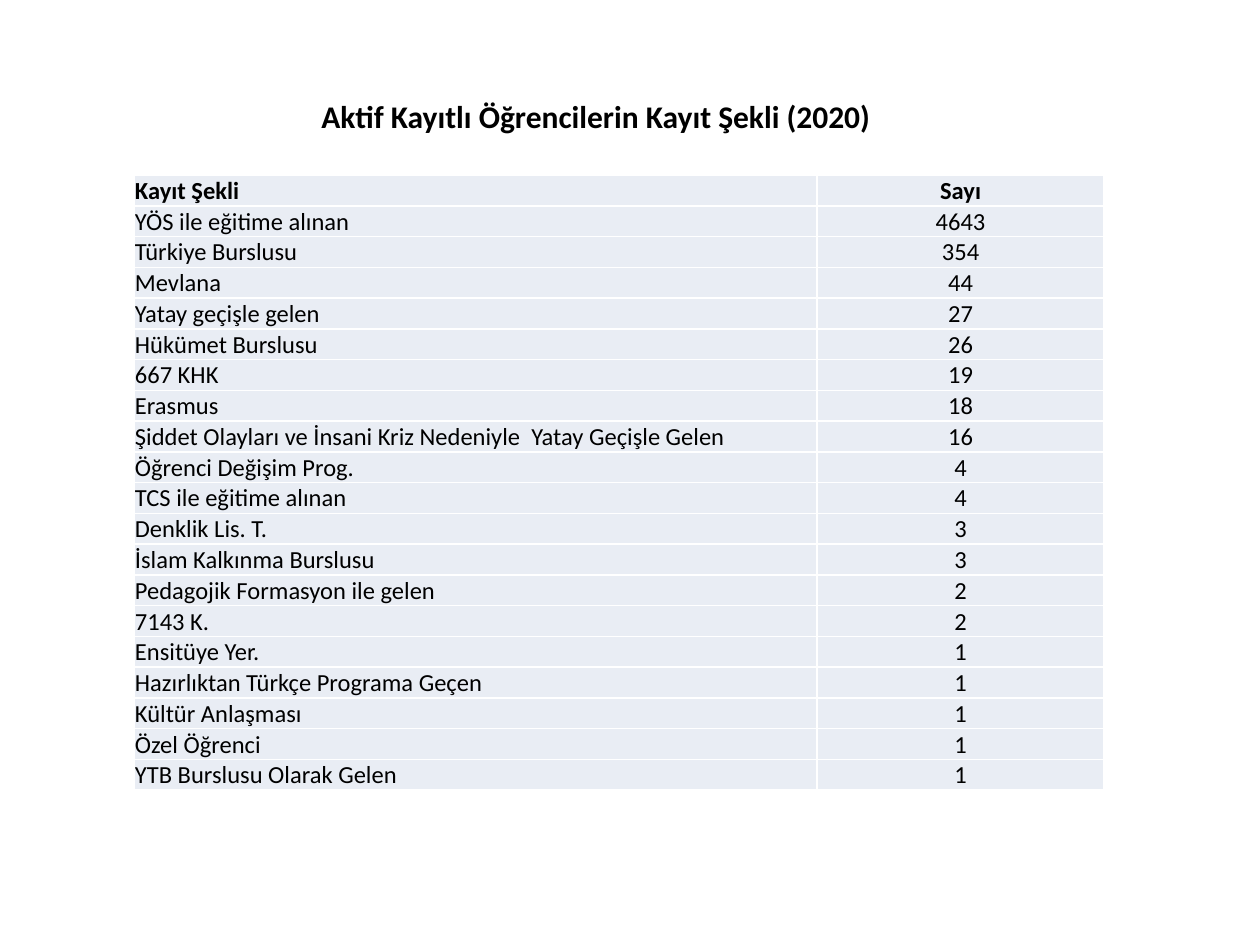
import pptx
import pptx.util
import pptx.dml.color
import pptx.enum.text
import pptx.oxml
import pptx.oxml.ns

Cm, Pt = pptx.util.Cm, pptx.util.Pt
RGB = pptx.dml.color.RGBColor
ALIGN = pptx.enum.text.PP_ALIGN
ANCHOR = pptx.enum.text.MSO_ANCHOR

COLORS = {"text": "000000", "cell": "E9EDF4", "border": "FFFFFF"}

ROWS = [
    ("Kayıt Şekli", "Sayı"),
    ("YÖS ile eğitime alınan", 4643),
    ("Türkiye Burslusu", 354),
    ("Mevlana", 44),
    ("Yatay geçişle gelen", 27),
    ("Hükümet Burslusu", 26),
    ("667 KHK", 19),
    ("Erasmus", 18),
    ("Şiddet Olayları ve İnsani Kriz Nedeniyle  Yatay Geçişle Gelen", 16),
    ("Öğrenci Değişim Prog.", 4),
    ("TCS ile eğitime alınan", 4),
    ("Denklik Lis. T.", 3),
    ("İslam Kalkınma Burslusu", 3),
    ("Pedagojik Formasyon ile gelen", 2),
    ("7143 K.", 2),
    ("Ensitüye Yer.", 1),
    ("Hazırlıktan Türkçe Programa Geçen", 1),
    ("Kültür Anlaşması", 1),
    ("Özel Öğrenci", 1),
    ("YTB Burslusu Olarak Gelen", 1),
]


def write(tf, text, size=14, bold=False, align=ALIGN.LEFT):
    p = tf.paragraphs[0]
    p.alignment = align
    r = p.add_run()
    r.text = text
    r.font.name = "Calibri"
    r.font.size = Pt(size)
    r.font.bold = bold
    r.font.color.rgb = RGB.from_string(COLORS["text"])


def add_borders(cell):
    tcPr = cell._tc.get_or_add_tcPr()
    for side in ("lnL", "lnR", "lnT", "lnB"):
        tcPr.append(pptx.oxml.parse_xml(
            f'<a:{side} {pptx.oxml.ns.nsdecls("a")} w="{Pt(1)}"><a:solidFill>'
            f'<a:srgbClr val="{COLORS["border"]}"/></a:solidFill></a:{side}>'))


prs = pptx.Presentation()
prs.slide_width, prs.slide_height = Cm(25.4), Cm(19.05)
s = prs.slides.add_slide(prs.slide_layouts[5])

# Title
sp = s.shapes.title
sp.left, sp.top, sp.width, sp.height = Cm(3.71), Cm(1.83), Cm(16.61), Cm(1.02)
tf = sp.text_frame
tf.word_wrap = True
tf.auto_size = pptx.enum.text.MSO_AUTO_SIZE.SHAPE_TO_FIT_TEXT
tf.vertical_anchor = ANCHOR.TOP
write(tf, "Aktif Kayıtlı Öğrencilerin Kayıt Şekli (2020)",
      size=18, bold=True, align=ALIGN.CENTER)

# Table
row_height = Cm(0.62)
table = s.shapes.add_table(len(ROWS), 2, Cm(2.7), Cm(3.53),
                           Cm(19.56), row_height * len(ROWS)).table
table.columns[0].width = Cm(13.77)
table.columns[1].width = Cm(5.79)

for i, values in enumerate(ROWS):
    table.rows[i].height = row_height
    for j, value in enumerate(values):
        cell = table.cell(i, j)
        cell.margin_left = cell.margin_right = cell.margin_top = Cm(0.02)
        cell.margin_bottom = 0
        cell.vertical_anchor = ANCHOR.MIDDLE
        add_borders(cell)
        cell.fill.solid()
        cell.fill.fore_color.rgb = RGB.from_string(COLORS["cell"])
        write(cell.text_frame, str(value), bold=i == 0,
              align=ALIGN.CENTER if j else ALIGN.LEFT)

prs.save("out.pptx")
